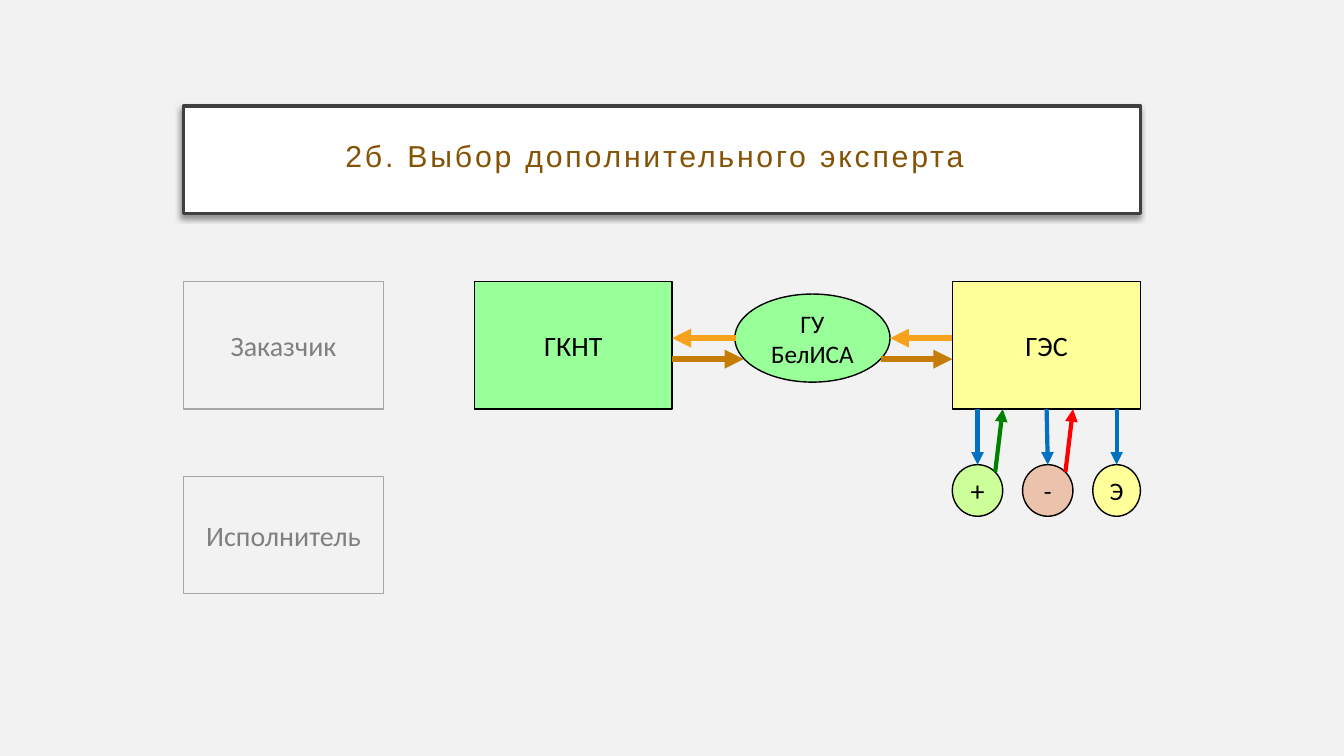
from pptx import Presentation, util as u
from pptx.dml.color import RGBColor
from pptx.enum import shapes as sh, text as tx
from pptx.oxml import parse_xml
from pptx.oxml.ns import nsdecls

RECT, OVAL = sh.MSO_SHAPE.RECTANGLE, sh.MSO_SHAPE.OVAL
GREEN, YELLOW = "99FF99", "FFFF99"
AMBER, BROWN, BLUE = "F6A21D", "C67D08", "0070C0"


def rgb(code):
    return RGBColor.from_string(code)


def place(shape, box):
    shape.left, shape.top, shape.width, shape.height = map(u.Cm, box)


def outline(shape, color, width):
    shape.line.color.rgb = rgb(color)
    shape.line.width = u.Pt(width)


def write(shape, words, size, color, font, pads):
    """Centre words in the shape; pads are the left, top, right and bottom insets."""
    frame = shape.text_frame
    frame.text = words
    frame.word_wrap = True
    frame.auto_size = tx.MSO_AUTO_SIZE.NONE
    frame.vertical_anchor = tx.MSO_ANCHOR.MIDDLE
    (frame.margin_left, frame.margin_top,
     frame.margin_right, frame.margin_bottom) = map(u.Cm, pads)
    par = frame.paragraphs[0]
    par.alignment = tx.PP_ALIGN.CENTER
    run = par.runs[0]
    run.font.size, run.font.name = u.Pt(size), font
    run.font.color.rgb = rgb(color)
    return run


def title(slide, box):
    head = slide.shapes.title
    place(head, box)
    head.fill.solid()
    head.fill.fore_color.rgb = rgb("FFFFFF")
    outline(head, "404040", 2.25)
    run = write(head, "2б. Выбор дополнительного эксперта", 21.6, "845305",
                "Arial", (0.5, 0.5, 0.86, 0.6))
    head.text_frame.paragraphs[0].line_spacing = 0.9
    run.font._element.set("spc", "200")
    head._element.spPr.append(parse_xml(
        f'<a:effectLst {nsdecls("a")}>'
        '<a:outerShdw blurRad="50800" dist="38100" dir="8100000" algn="tr" rotWithShape="0">'
        '<a:srgbClr val="000000"><a:alpha val="40000"/></a:srgbClr>'
        '</a:outerShdw></a:effectLst>'))


def node(slide, kind, box, words, fill=None, size=20, ink="000000",
         edge="000000", pads=(0.25, 0.13, 0.25, 0.13)):
    shape = slide.shapes.add_shape(kind, *map(u.Cm, box))
    shape.shadow.inherit = False
    if fill:
        shape.fill.solid()
        shape.fill.fore_color.rgb = rgb(fill)
    else:
        shape.fill.background()
    outline(shape, edge, 1)
    write(shape, words, size, ink, "Calibri", pads)
    return shape


def arrow(slide, start, end, color, width):
    line = slide.shapes.add_connector(
        sh.MSO_CONNECTOR.STRAIGHT, *map(u.Cm, start + end))
    outline(line, color, width)
    line.line._get_or_add_ln().append(
        parse_xml(f'<a:tailEnd {nsdecls("a")} type="triangle"/>'))
    line._element.spPr.append(parse_xml(f'<a:effectLst {nsdecls("a")}/>'))
    return line


def parties(slide, left, top, wide):
    """The two greyed-out parties, one above the other."""
    for words, drop, high in (("Заказчик", 0, 3.22), ("Исполнитель", 4.92, 2.95)):
        node(slide, RECT, (left, top + drop, wide, high), words,
             ink="808080", edge="A6A6A6")


def chain(slide, left, top, wide, high):
    """Committee, institute and council in a row; returns the council."""
    right = left + wide
    near, far = left + 4.98, right - 4.75
    node(slide, RECT, (left, top, 4.98, high), "ГКНТ", GREEN)
    node(slide, OVAL, (left + 6.56, top + 0.32, 3.91, 2.22), "ГУ БелИСА", GREEN, 18)
    council = node(slide, RECT, (far, top, 4.75, high), "ГЭС", YELLOW)
    back, forth = top + 1.43, top + 1.96
    for begin, end, y, color in ((far, far - 1.57, back, AMBER),
                                 (near + 1.62, near, back, AMBER),
                                 (near, near + 1.8, forth, BROWN),
                                 (far - 1.8, far, forth, BROWN)):
        arrow(slide, (begin, y), (end, y), color, 4.5)
    return council


def experts(slide, council, left, base, top):
    """Discs under the council, with a question down and a reply up."""
    rows = (("+", "CCFF99", 20, 1.27, "008000"),
            ("-", "EBC2AB", 18, 1.27, "FF0000"),
            ("Э", YELLOW, 18, 1.2, None))
    for i, (words, fill, size, wide, reply) in enumerate(rows):
        x = left + 1.77 * i
        mid = x + wide / 2
        disc = node(slide, OVAL, (x, top, wide, 1.3), words, fill, size,
                    pads=(0, 0, 0, 0))
        ask = arrow(slide, (mid, base), (mid, top), BLUE, 3)
        if i == 1:
            ask.begin_connect(council, 2)
        ask.end_connect(disc, 0)
        if reply:
            arrow(slide, (x + 1.08, top + 0.18), (x + 1.27, base), reply, 3)


def main():
    deck = Presentation()
    deck.slide_width, deck.slide_height = u.Cm(33.87), u.Cm(19.05)
    slide = deck.slides.add_slide(deck.slide_layouts[5])
    back = slide.background.fill
    back.solid()
    back.fore_color.rgb = rgb("F2F2F2")
    left, top, high = 4.62, 7.09, 3.22
    title(slide, (left, 2.67, 24.13, 2.72))
    parties(slide, left, top, 5.05)
    council = chain(slide, 11.96, top, 16.79, high)
    experts(slide, council, 24, top + high, 11.71)
    deck.save("out.pptx")


if __name__ == "__main__":
    main()
